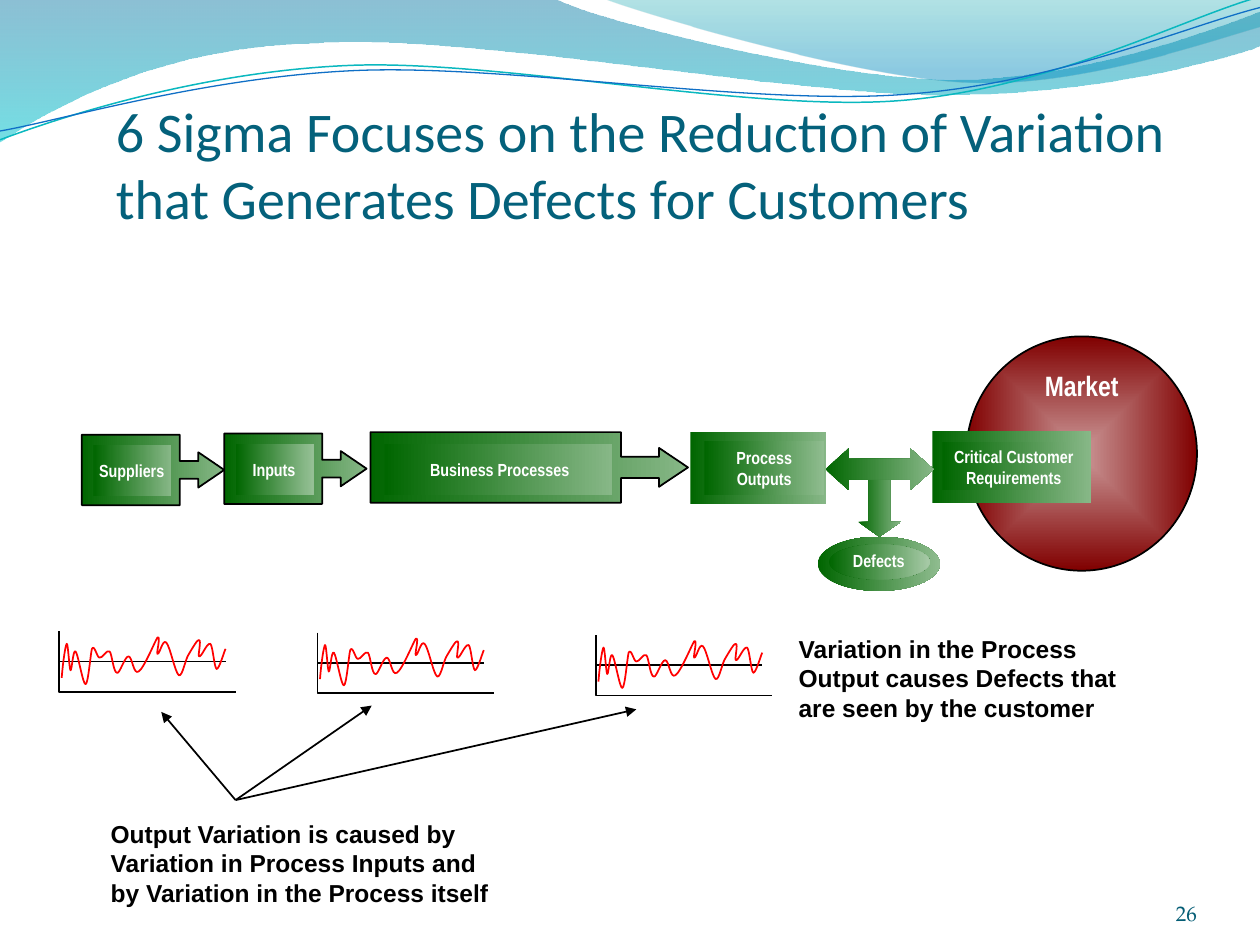
"""Build the slide on how process variation creates defects for customers."""
from dataclasses import dataclass
from typing import Optional

from lxml import etree
from pptx import Presentation
from pptx import util as u
from pptx.dml import color
from pptx.enum import shapes, text
from pptx.oxml import ns

KIND = shapes.MSO_SHAPE
LINK = shapes.MSO_CONNECTOR
ALIGN = text.PP_ALIGN
ANCHOR = text.MSO_ANCHOR
GREEN, PALE = "006600", "87B787"


@dataclass
class Block:
    kind: KIND
    box: tuple
    end: str = PALE
    outlined: bool = False
    adjust: tuple = ()


@dataclass
class Label:
    words: str
    box: tuple
    size: int = 10
    font: str = "Arial Narrow"
    ink: str = "FFFFFF"
    bold: bool = True
    align: ALIGN = ALIGN.CENTER
    anchor: ANCHOR = ANCHOR.TOP
    inset: Optional[tuple] = None


@dataclass
class Wave:
    legs: list
    stops: tuple
    alphas: tuple
    last: float = 1


CALLOUT = (0.25, 0.25, 0.367, 0.688)
BLOCKS = [
    Block(KIND.RIGHT_ARROW_CALLOUT, (1.78, 3.44, 1.13, 0.56), PALE, True, CALLOUT),
    Block(KIND.RECTANGLE, (1.87, 3.52, 0.62, 0.41), "97C197"),
    Block(KIND.RIGHT_ARROW_CALLOUT, (2.94, 3.43, 2.52, 0.56), PALE, True, (0.3, 0.275, 0.41, 0.789)),
    Block(KIND.RECTANGLE, (3.05, 3.52, 1.81, 0.41)),
    Block(KIND.RIGHT_ARROW_CALLOUT, (0.65, 3.45, 1.13, 0.56), PALE, True, CALLOUT),
    Block(KIND.RECTANGLE, (0.74, 3.53, 0.62, 0.41)),
    Block(KIND.RECTANGLE, (7.4, 3.42, 1.26, 0.57)),
    Block(KIND.RECTANGLE, (7.48, 3.51, 1.1, 0.38), "7FB27F"),
    Block(KIND.DOWN_ARROW, (6.81, 3.75, 0.34, 0.51), adjust=(0.5, 0.348)),
    Block(KIND.LEFT_RIGHT_ARROW, (6.55, 3.56, 0.86, 0.33), adjust=(0.5, 0.561)),
    Block(KIND.RECTANGLE, (5.48, 3.43, 1.08, 0.57)),
    Block(KIND.RECTANGLE, (5.61, 3.51, 0.88, 0.41), "8FBC8F"),
    Block(KIND.RECTANGLE, (5.59, 3.5, 0.95, 0.43), "8FBC8F"),
    Block(KIND.OVAL, (6.49, 4.26, 0.97, 0.43), "8FBC8F"),
    Block(KIND.OVAL, (6.58, 4.32, 0.8, 0.28), "A7CAA7"),
]
NOTE = dict(size=14, font="Arial", ink="000000", align=ALIGN.LEFT, anchor=ANCHOR.MIDDLE)
LABELS = [
    Label("Market", (7.92, 2.88, 1.33, 0.37), size=16),
    Label("Suppliers", (0.58, 3.6, 0.93, 0.27)),
    Label("Inputs", (1.71, 3.59, 0.93, 0.27)),
    Label("Business Processes", (3.17, 3.59, 1.59, 0.27)),
    Label("Process Outputs", (5.59, 3.5, 0.95, 0.43)),
    Label("Critical Customer Requirements", (7.25, 3.49, 1.59, 0.43)),
    Label("Defects", (6.51, 4.32, 0.93, 0.27)),
    Label("Variation in the Process Output causes Defects that are seen by the customer",
          (6.24, 4.98, 2.84, 0.8), **NOTE),
    Label("Output Variation is caused by Variation in Process Inputs and by Variation "
          "in the Process itself", (0.78, 6.45, 3.3, 0.8), **NOTE),
    Label("26", (8.67, 6.95, 0.83, 0.4), 12, "TeX Gyre Pagella", "045D75", False,
          ALIGN.RIGHT, ANCHOR.BOTTOM, (0, 0, 0, 0)),
]
TITLE = Label("6 Sigma Focuses on the Reduction of Variation that Generates Defects for Customers",
              (0.92, 0.58, 8.5, 1.25), 32, "Calibri", "04617B", False,
              ALIGN.LEFT, ANCHOR.BOTTOM, (0, 0.05, 0, 0))
WAVES = [
    Wave([[(0, 0)], [(4.4, -0.01)],
          [(4.76, 0.17), (6.64, 0.63), (7.58, 0.63), (8.53, 0.63), (9.58, 0.26), (10, 0.09)],
          [(10.01, 0.36)],
          [(9.83, 0.44), (8.7, 0.76), (7.46, 0.75), (6.22, 0.75), (3.82, 0.28), (2.57, 0.34),
           (1.29, 0.36), (0.46, 0.83), (-0.01, 1.13)]], ("0074A1", "00C6CF"), (45, 55)),
    Wave([[(4.79, -0.01)],
          [(5.09, 0.11), (6.82, 0.62), (7.69, 0.65), (8.56, 0.69), (9.61, 0.32), (10, 0.21)],
          [(10, 0)]], ("00A1A9", "008BBF"), (30, 45), 0.8),
]
SIGNAL = [
    (0.02, 0.37), (0.03, 0.24), (0.05, 0.11), (0.06, 0.1), (0.07, 0.09), (0.08, 0.3), (0.09, 0.31),
    (0.1, 0.32), (0.11, 0.14), (0.13, 0.16), (0.15, 0.18), (0.19, 0.43), (0.21, 0.42),
    (0.23, 0.42), (0.25, 0.17), (0.26, 0.14), (0.28, 0.1), (0.3, 0.21), (0.32, 0.21),
    (0.34, 0.22), (0.38, 0.14), (0.4, 0.16), (0.42, 0.18), (0.43, 0.33), (0.46, 0.33),
    (0.48, 0.34), (0.52, 0.2), (0.55, 0.2), (0.58, 0.2), (0.59, 0.35), (0.63, 0.32),
    (0.67, 0.3), (0.76, 0.08), (0.78, 0.05), (0.81, 0.03), (0.77, 0.17), (0.78, 0.18),
    (0.8, 0.18), (0.82, 0.06), (0.85, 0.09), (0.88, 0.12), (0.92, 0.33), (0.95, 0.35),
    (0.98, 0.36), (1, 0.22), (1.03, 0.18), (1.06, 0.13), (1.1, 0.06), (1.11, 0.07),
    (1.13, 0.07), (1.1, 0.19), (1.11, 0.2), (1.13, 0.21), (1.17, 0.09), (1.2, 0.1),
    (1.22, 0.12), (1.23, 0.29), (1.25, 0.3), (1.27, 0.3), (1.31, 0.16), (1.32, 0.14),
]


def rgb(value: str) -> color.RGBColor:
    return color.RGBColor.from_string(value)


def set_line(shape, ink: str = "000000", width: float = 1) -> None:
    shape.line.color.rgb = rgb(ink)
    shape.line.width = u.Pt(width)


def set_gradient(shape, stops: tuple, angle: float = 0, last: float = 1) -> None:
    shape.shadow.inherit = False
    shape.fill.gradient()
    shape.fill.gradient_angle = angle
    for stop, value in zip(shape.fill.gradient_stops, stops):
        stop.color.rgb = rgb(value)
    shape.fill.gradient_stops[1].position = last


def draw_freeform(page, legs: list, close: bool):
    """Draw a start point, then legs of one point (straight) or point triples (cubic)."""
    start, *corners = [(u.Inches(x), u.Inches(y)) for leg in legs for x, y in leg]
    builder = page.shapes.build_freeform(*start)
    builder.add_line_segments(corners, close=close)
    shape = builder.convert_to_shape()
    shape.shadow.inherit = False
    segments = iter(shape.element.xpath(".//a:lnTo"))
    for leg in legs[1:]:
        nodes = [next(segments) for _ in leg]
        for i in range(0, len(nodes) - 2, 3):
            cubic = etree.Element(ns.qn("a:cubicBezTo"))
            nodes[i].addprevious(cubic)
            for node in nodes[i:i + 3]:
                cubic.append(node[0])
                node.getparent().remove(node)
    return shape


def draw_stroke(page, points: list, ink: str, width: float) -> None:
    shape = draw_freeform(page, [points[:1], points[1:]], False)
    shape.fill.background()
    set_line(shape, ink, width)


def draw_wave(page, wave: Wave) -> None:
    shape = draw_freeform(page, wave.legs, True)
    set_gradient(shape, wave.stops, 270, wave.last)
    shape.line.fill.background()
    for tint, alpha in zip(shape.element.xpath(".//a:gs/a:srgbClr"), wave.alphas):
        etree.SubElement(tint, ns.qn("a:alpha"), val=str(alpha * 1000))


def draw_block(page, block: Block) -> None:
    shape = page.shapes.add_shape(block.kind, *map(u.Inches, block.box))
    for i, value in enumerate(block.adjust):
        shape.adjustments[i] = value
    set_gradient(shape, (GREEN, block.end))
    if block.outlined:
        set_line(shape)
    else:
        shape.line.fill.background()


def write(shape, label: Label) -> None:
    frame = shape.text_frame
    frame.word_wrap, frame.auto_size = True, text.MSO_AUTO_SIZE.NONE
    frame.vertical_anchor = label.anchor
    if label.inset:
        (frame.margin_left, frame.margin_top,
         frame.margin_right, frame.margin_bottom) = map(u.Inches, label.inset)
    para = frame.paragraphs[0]
    para.alignment = label.align
    span = para.add_run()
    span.text = label.words
    span.font.size, span.font.name, span.font.bold = u.Pt(label.size), label.font, label.bold
    span.font.color.rgb = rgb(label.ink)


def draw_link(page, kind: LINK, start: tuple, end: tuple):
    link = page.shapes.add_connector(kind, *map(u.Inches, start + end))
    set_line(link)
    etree.SubElement(link.element.spPr, ns.qn("a:effectLst"))
    return link


def draw_chart_sketch(page, x: float, y: float) -> None:
    axes = draw_link(page, LINK.ELBOW, (x, y), (x + 1.4, y + 0.48))
    guides = axes.element.xpath(".//a:avLst")[0]
    etree.SubElement(guides, ns.qn("a:gd"), name="adj1", fmla="val 0")
    draw_link(page, LINK.STRAIGHT, (x, y + 0.24), (x + 1.32, y + 0.24))
    draw_stroke(page, [(x + dx, y + dy) for dx, dy in SIGNAL], "FF0000", 1)


def draw_market(page) -> None:
    market = page.shapes.add_shape(KIND.OVAL, *map(u.Inches, (7.67, 2.67, 1.83, 1.86)))
    set_gradient(market, ("CB9797", "800000"))
    set_line(market)
    linear = market.element.xpath(".//a:gradFill/a:lin")[0]
    radial = etree.SubElement(linear.getparent(), ns.qn("a:path"), {"path": "shape"})
    etree.SubElement(radial, ns.qn("a:fillToRect"), dict.fromkeys("ltrb", "50000"))
    linear.getparent().remove(linear)


def main() -> None:
    deck = Presentation()
    deck.slide_width, deck.slide_height = u.Inches(10), u.Inches(7.5)
    page = deck.slides.add_slide(deck.slide_layouts[5])
    for wave in WAVES:
        draw_wave(page, wave)
    draw_stroke(page, [(0, 1.11), (0.48, 0.93), (1.58, 0.57), (2.77, 0.52), (3.95, 0.47), (5.93, 0.89),
                       (7.13, 0.8), (8.33, 0.71), (9.38, 0.15), (9.98, -0.02)], "0AB8BF", 0.85)
    draw_stroke(page, [(0, 1.04), (0.47, 0.96), (1.64, 0.61), (2.83, 0.56), (4.03, 0.51), (5.97, 0.84),
                       (7.17, 0.75), (8.36, 0.67), (9.41, 0.21), (10, 0.06)], "0F6FC6", 0.75)
    draw_market(page)
    for corner in ((4.73, 5.04), (2.52, 5.02), (0.47, 5.01)):
        draw_chart_sketch(page, *corner)
    for block in BLOCKS:
        draw_block(page, block)
    for label in LABELS:
        write(page.shapes.add_textbox(*map(u.Inches, label.box)), label)
    for tip in ((1.28, 5.65), (2.95, 5.6), (5.05, 5.63)):
        arrow = draw_link(page, LINK.STRAIGHT, (1.87, 6.35), tip)
        etree.SubElement(arrow.element.xpath(".//a:ln")[0], ns.qn("a:tailEnd"), type="triangle")
    title = page.shapes.title
    title.left, title.top, title.width, title.height = map(u.Inches, TITLE.box)
    write(title, TITLE)
    page.shapes.element.append(title.element)
    deck.save("out.pptx")


if __name__ == "__main__":
    main()
